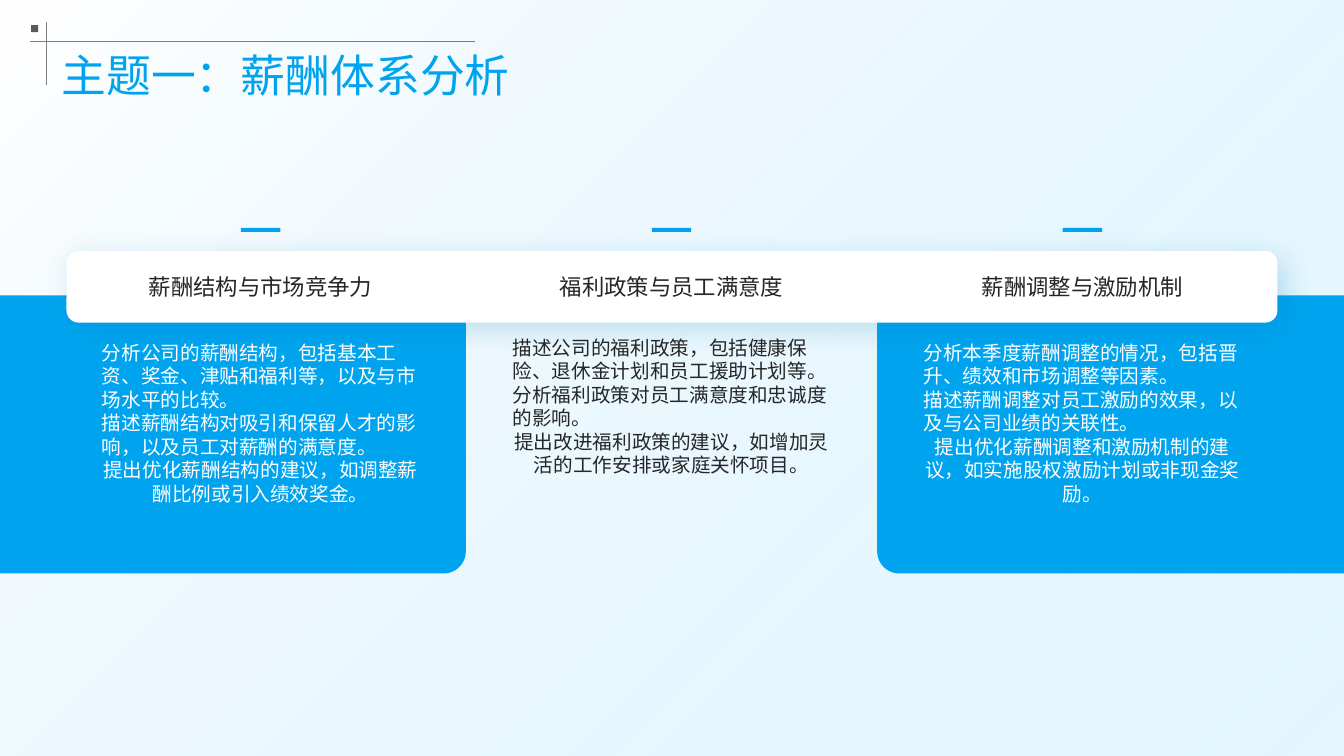
import pptx
import pptx.dml.color
import pptx.enum.dml
import pptx.enum.shapes
import pptx.enum.text
import pptx.oxml
import pptx.oxml.ns
import pptx.util
from pptx.util import Inches

RGBColor = pptx.dml.color.RGBColor
SHAPE = pptx.enum.shapes.MSO_SHAPE
ALIGN = pptx.enum.text.PP_ALIGN
ANCHOR = pptx.enum.text.MSO_ANCHOR

FONT = "Noto Sans CJK SC"
BLUE = RGBColor(0x00, 0xA4, 0xEE)
PALE_BLUE = RGBColor(0xC9, 0xEE, 0xFF)
WHITE = RGBColor(0xFF, 0xFF, 0xFF)
INK = RGBColor(0x26, 0x26, 0x26)
GREY = RGBColor(0x80, 0x80, 0x80)
DARK_GREY = RGBColor(0x59, 0x59, 0x59)
SHADOW_BLUE = RGBColor(0x00, 0x7B, 0xB2)

COLUMN_LEFT, COLUMN_STEP, COLUMN_WIDTH = 1.01, 4.075, 3.15
DASH_WIDTH = 0.39

# Heading, body top, body colour, body paragraphs
COLUMNS = [
    ("薪酬结构与市场竞争力", 3.38, WHITE, [
        "分析公司的薪酬结构，包括基本工资、奖金、津贴和福利等，以及与市场水平的比较。",
        "描述薪酬结构对吸引和保留人才的影响，以及员工对薪酬的满意度。",
        "提出优化薪酬结构的建议，如调整薪酬比例或引入绩效奖金。",
    ]),
    ("福利政策与员工满意度", 3.33, INK, [
        "描述公司的福利政策，包括健康保险、退休金计划和员工援助计划等。",
        "分析福利政策对员工满意度和忠诚度的影响。",
        "提出改进福利政策的建议，如增加灵活的工作安排或家庭关怀项目。",
    ]),
    ("薪酬调整与激励机制", 3.38, WHITE, [
        "分析本季度薪酬调整的情况，包括晋升、绩效和市场调整等因素。",
        "描述薪酬调整对员工激励的效果，以及与公司业绩的关联性。",
        "提出优化薪酬调整和激励机制的建议，如实施股权激励计划或非现金奖励。",
    ]),
]


def add_block(slide, kind, left, top, width, height, color):
    block = slide.shapes.add_shape(
        kind, Inches(left), Inches(top), Inches(width), Inches(height))
    block.shadow.inherit = False
    block.fill.solid()
    block.fill.fore_color.rgb = color
    block.line.fill.background()
    return block


def add_backdrop(slide):
    backdrop = add_block(slide, SHAPE.RECTANGLE, 0, 0, 13.33, 7.5, WHITE)
    backdrop.fill.gradient()
    backdrop.fill.gradient_angle = 315
    for stop, color, position in zip(
            backdrop.fill.gradient_stops, (WHITE, PALE_BLUE), (0, 1)):
        stop.color.rgb = color
        stop.position = position
    final_color = backdrop._element.spPr.findall(
        ".//" + pptx.oxml.ns.qn("a:srgbClr"))[-1]
    final_color.append(pptx.oxml.parse_xml(
        f'<a:alpha {pptx.oxml.ns.nsdecls("a")} val="50000"/>'))


def add_soft_shadow(shape):
    properties = shape._element.spPr
    properties.remove(properties.find(pptx.oxml.ns.qn("a:effectLst")))
    blur, distance = pptx.util.Pt(20), pptx.util.Pt(6)
    properties.append(pptx.oxml.parse_xml(
        f'<a:effectLst {pptx.oxml.ns.nsdecls("a")}>'
        f'<a:outerShdw blurRad="{blur}" dist="{distance}" dir="2700000" '
        f'algn="tl" rotWithShape="0"><a:srgbClr val="{SHADOW_BLUE}">'
        '<a:alpha val="20000"/></a:srgbClr></a:outerShdw></a:effectLst>'))


def add_rule(slide, start, end):
    rule = slide.shapes.add_connector(
        pptx.enum.shapes.MSO_CONNECTOR.STRAIGHT,
        *(Inches(value) for value in start + end))
    rule.line.color.rgb = GREY
    rule.line.width = pptx.util.Pt(0.5)
    rule._element.spPr.append(pptx.oxml.parse_xml(
        f'<a:effectLst {pptx.oxml.ns.nsdecls("a")}/>'))


def add_text(slide, left, top, width, height, lines, size, color,
             anchor=ANCHOR.MIDDLE):
    """Add a text box; lines holds (text, alignment) for each paragraph."""
    box = slide.shapes.add_textbox(
        Inches(left), Inches(top), Inches(width), Inches(height))
    frame = box.text_frame
    frame.word_wrap = True
    frame.vertical_anchor = anchor
    frame.margin_left = frame.margin_right = 0
    frame.margin_top = frame.margin_bottom = 0
    for index, (text, alignment) in enumerate(lines):
        para = frame.add_paragraph() if index else frame.paragraphs[0]
        para.alignment = alignment
        para._p.get_or_add_pPr().set("hangingPunct", "0")
        span = para.add_run()
        span.text = text
        span.font.size = pptx.util.Pt(size)
        span.font.name = FONT
        span.font.color.rgb = color
        span._r.get_or_add_rPr().append(pptx.oxml.parse_xml(
            f'<a:ea {pptx.oxml.ns.nsdecls("a")} typeface="{FONT}"/>'))


def add_column(slide, left, heading, body_top, body_color, body):
    add_block(slide, SHAPE.RECTANGLE, left + (COLUMN_WIDTH - DASH_WIDTH) / 2,
              2.26, DASH_WIDTH, 0.04, BLUE)
    add_text(slide, left, 2.65, COLUMN_WIDTH, 0.39,
             [(heading, ALIGN.CENTER)], 16, INK)
    alignments = (ALIGN.LEFT, ALIGN.LEFT, ALIGN.CENTER)
    add_text(slide, left, body_top, COLUMN_WIDTH, 2.17,
             zip(body, alignments), 14, body_color, ANCHOR.TOP)


def add_title(slide, title):
    add_rule(slide, (0.3, 0.41), (4.71, 0.41))
    add_rule(slide, (0.46, 0.84), (0.46, 0.22))
    add_block(slide, SHAPE.RECTANGLE, 0.31, 0.25, 0.07, 0.07, DARK_GREY)
    add_text(slide, 0.61, 0.51, 12.04, 0.47, [(title, ALIGN.LEFT)], 32, BLUE)


def main():
    deck = pptx.Presentation()
    deck.slide_width, deck.slide_height = Inches(13.33), Inches(7.5)
    slide = deck.slides.add_slide(deck.slide_layouts[6])

    add_backdrop(slide)
    for panel_left in (8.7, -0.3):
        panel = add_block(slide, SHAPE.ROUNDED_RECTANGLE,
                          panel_left, 2.93, 4.92, 2.76, BLUE)
        panel.adjustments[0] = 0.08
    heading_bar = add_block(slide, SHAPE.ROUNDED_RECTANGLE,
                            0.66, 2.49, 12.01, 0.71, WHITE)
    add_soft_shadow(heading_bar)
    for index, column in enumerate(COLUMNS):
        add_column(slide, COLUMN_LEFT + index * COLUMN_STEP, *column)
    add_title(slide, "主题一：薪酬体系分析")

    deck.save("out.pptx")


if __name__ == "__main__":
    main()
